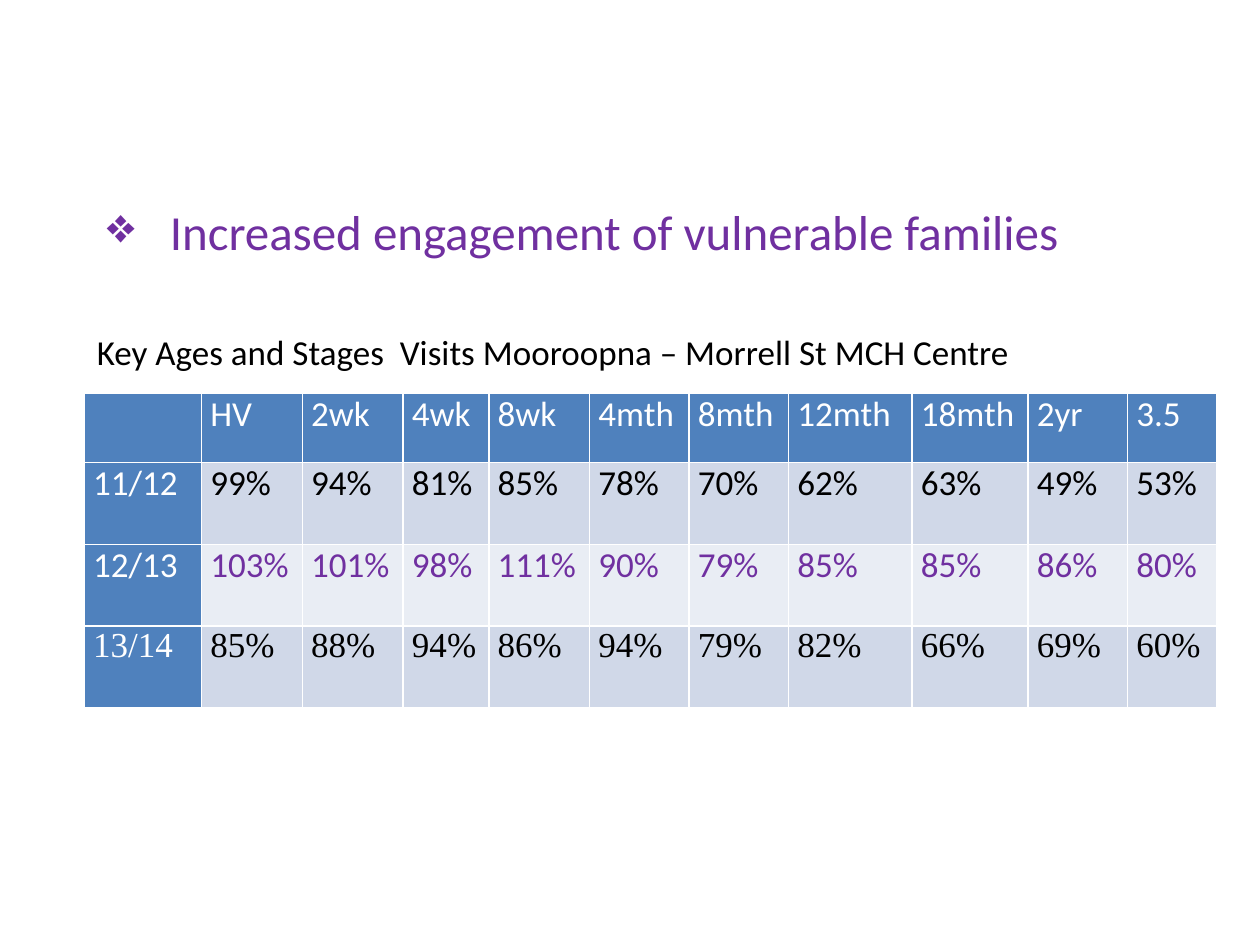
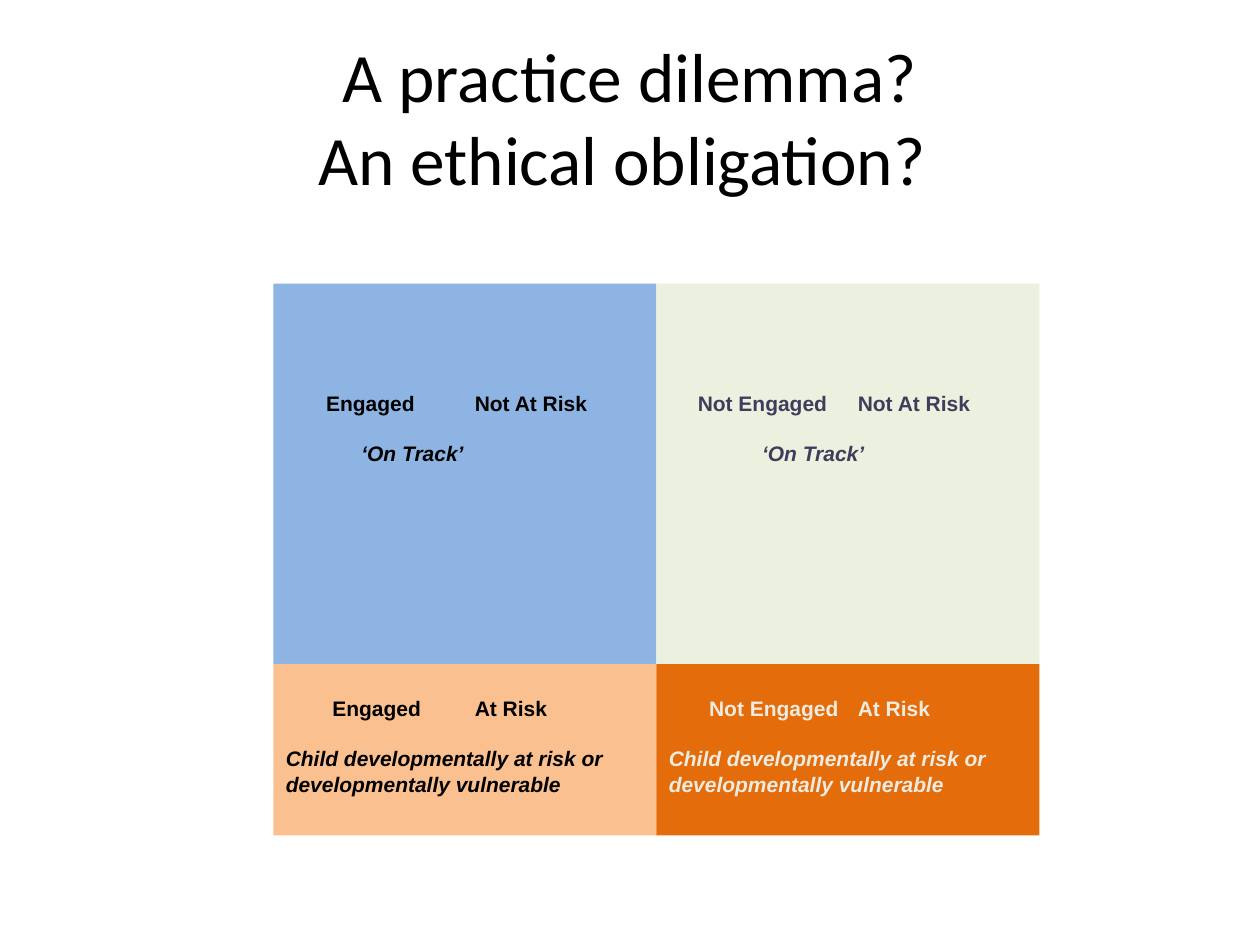
"""Builds two slides: visit rates by key age, and an engagement and risk matrix."""
from typing import NamedTuple

from lxml import etree
from pptx import Presentation
from pptx.dml.color import RGBColor
from pptx.enum.shapes import MSO_SHAPE
from pptx.enum.text import MSO_ANCHOR, PP_ALIGN
from pptx.oxml.ns import qn
from pptx.util import Emu, Pt

RECTANGLE = MSO_SHAPE.RECTANGLE
TOP, MIDDLE = MSO_ANCHOR.TOP, MSO_ANCHOR.MIDDLE
LEFT, CENTER = PP_ALIGN.LEFT, PP_ALIGN.CENTER

EMU_PER_PX = 9144
PAGE_WIDTH, PAGE_HEIGHT = 1000, 750

BLACK, WHITE, PURPLE = "000000", "FFFFFF", "7030A0"
HEADER_BLUE, BAND_DARK, BAND_LIGHT = "4F81BD", "D0D8E8", "E9EDF4"
BODY_FONT, TILE_FONT, SERIF_FONT = "Calibri", "Arial", "Times New Roman"

TABLE_LEFT, TABLE_TOP = 67, 312
COLUMN_WIDTHS = (93, 80, 80, 68, 80, 79, 79, 98, 92, 79, 71)
HEADER_HEIGHT, YEAR_HEIGHT = 55, 65
AGES = ("", "HV", "2wk", "4wk", "8wk", "4mth", "8mth", "12mth", "18mth", "2yr", "3.5")

TILE_LEFT, TILE_WIDTH = 217, 304
TILE_ROWS = ((225, 302), (527, 136))
TILE_PADDING = (85, 25)
TILE_GAP = 14.4
AT_RISK_NOTE = "Child developmentally at risk or developmentally vulnerable"


class Box(NamedTuple):
    """A rectangle in px."""
    left: int
    top: int
    width: int
    height: int


class YearRow(NamedTuple):
    """The visit rates of one year and how they look."""
    year: str
    rates: tuple[int, ...]
    fill: str
    color: str
    font: str


class Tile(NamedTuple):
    """One quadrant of the matrix, with text starts in px from its inset."""
    row: int
    column: int
    fill: str
    color: str
    engagement: str
    risk: str
    note: str
    engagement_start: int
    risk_start: int
    note_start: int


YEARS = (
    YearRow("11/12", (99, 94, 81, 85, 78, 70, 62, 63, 49, 53), BAND_DARK, BLACK, BODY_FONT),
    YearRow("12/13", (103, 101, 98, 111, 90, 79, 85, 85, 86, 80), BAND_LIGHT, PURPLE, BODY_FONT),
    YearRow("13/14", (85, 88, 94, 86, 94, 79, 82, 66, 69, 60), BAND_DARK, BLACK, SERIF_FONT),
)
TILES = (
    Tile(0, 0, "8EB4E3", BLACK, "Engaged", "Not At Risk", "‘On Track’", 32, 130, 60),
    Tile(1, 0, "FAC090", BLACK, "Engaged", "At Risk", AT_RISK_NOTE, 37, 120, 0),
    Tile(1, 1, "E46C0A", "EEECE1", "Not Engaged", "At Risk", AT_RISK_NOTE, 32, 153, 0),
    Tile(0, 1, "EBF1DE", "3E3E5C", "Not Engaged", "Not At Risk", "‘On Track’", 23, 144, 74),
)


def px(length: int) -> Emu:
    """Turn px into EMU."""
    return Emu(length * EMU_PER_PX)


def rgb(color: str) -> RGBColor:
    """Turn a hex string into a colour."""
    return RGBColor.from_string(color)


def place(box: Box) -> tuple[Emu, ...]:
    """Turn a box into EMU lengths."""
    return tuple(px(length) for length in box)


def write(para, text: str, *, size: float, color: str, font: str = BODY_FONT,
          bold: bool = False, italic: bool = False, align=LEFT, before: float = 0,
          margin: int = 0, indent: int = 0, bullet: str = "", tab: int = 0) -> None:
    """Write formatted text into a paragraph."""
    para.text = text
    para.alignment = align
    para.space_before = Pt(before)
    for span in para.runs:
        span.font.size = Pt(size)
        span.font.name = font
        span.font.bold = bold
        span.font.italic = italic
        span.font.color.rgb = rgb(color)
    properties = para._p.get_or_add_pPr()
    properties.set("marL", str(px(margin)))
    properties.set("indent", str(px(indent)))
    if bullet:
        etree.SubElement(properties, qn("a:buChar"), char=bullet)
    if tab:
        stops = etree.SubElement(properties, qn("a:tabLst"))
        etree.SubElement(stops, qn("a:tab"), pos=str(px(tab)), algn="l")


def add_text(page, box: Box, text: str, *, anchor=TOP, **style) -> None:
    """Add a wrapping text box with one paragraph."""
    frame = page.shapes.add_textbox(*place(box)).text_frame
    frame.word_wrap = True
    frame.vertical_anchor = anchor
    write(frame.paragraphs[0], text, **style)


def fill_cell(cell, text: str, *, fill: str, color: str, font: str = BODY_FONT) -> None:
    """Give a cell its borders, fill, insets and text."""
    properties = cell._tc.get_or_add_tcPr()
    for side in ("lnL", "lnR", "lnT", "lnB"):
        line = etree.SubElement(properties, qn(f"a:{side}"), w=str(Pt(1)))
        solid = etree.SubElement(line, qn("a:solidFill"))
        etree.SubElement(solid, qn("a:srgbClr"), val=WHITE)
    cell.fill.solid()
    cell.fill.fore_color.rgb = rgb(fill)
    cell.margin_left = cell.margin_right = px(7)
    cell.margin_top = cell.margin_bottom = 0
    write(cell.text_frame.paragraphs[0], text, size=20, color=color, font=font)


def add_visit_table(page) -> None:
    """Add the table of visit rates by year and age."""
    heights = (HEADER_HEIGHT,) + (YEAR_HEIGHT,) * len(YEARS)
    box = Box(TABLE_LEFT, TABLE_TOP, sum(COLUMN_WIDTHS), sum(heights))
    table = page.shapes.add_table(len(heights), len(AGES), *place(box)).table
    for column, width in zip(table.columns, COLUMN_WIDTHS):
        column.width = px(width)
    for row, height in zip(table.rows, heights):
        row.height = px(height)
    for index, age in enumerate(AGES):
        fill_cell(table.cell(0, index), age, fill=HEADER_BLUE, color=WHITE)
    for row, entry in enumerate(YEARS, start=1):
        fill_cell(table.cell(row, 0), entry.year, fill=HEADER_BLUE, color=WHITE,
                  font=entry.font)
        for index, rate in enumerate(entry.rates, start=1):
            fill_cell(table.cell(row, index), f"{rate}%", fill=entry.fill,
                      color=entry.color, font=entry.font)


def add_tile(page, tile: Tile) -> None:
    """Add one quadrant of the matrix."""
    top, height = TILE_ROWS[tile.row]
    box = Box(TILE_LEFT + tile.column * TILE_WIDTH, top, TILE_WIDTH, height)
    shape = page.shapes.add_shape(RECTANGLE, *place(box))
    shape.shadow.inherit = False
    shape.fill.solid()
    shape.fill.fore_color.rgb = rgb(tile.fill)
    shape.line.fill.background()
    frame = shape.text_frame
    frame.word_wrap = True
    frame.vertical_anchor = TOP
    frame.margin_top = px(TILE_PADDING[tile.row])
    write(frame.paragraphs[0], f"{tile.engagement}\t{tile.risk}", size=12, font=TILE_FONT,
          color=tile.color, bold=True, indent=tile.engagement_start, tab=tile.risk_start)
    write(frame.add_paragraph(), tile.note, size=12, font=TILE_FONT, color=tile.color,
          bold=True, italic=True, before=TILE_GAP, indent=tile.note_start)


def build_visits(page) -> None:
    """Build the slide on engagement of vulnerable families."""
    add_visit_table(page)
    add_text(page, Box(67, 257, 771, 44),
             "Key Ages and Stages  Visits Mooroopna – Morrell St MCH Centre",
             size=20, color=BLACK)
    add_text(page, Box(75, 155, 787, 57), "Increased engagement of vulnerable families",
             size=28, color=PURPLE, margin=50, indent=-50, bullet="❖")


def build_dilemma(page) -> None:
    """Build the slide with the engagement and risk matrix."""
    add_text(page, Box(50, 30, 900, 125), "A practice dilemma?\vAn ethical obligation? ",
             anchor=MIDDLE, size=39.6, color=BLACK, align=CENTER)
    for tile in TILES:
        add_tile(page, tile)


def main() -> None:
    """Build and save the deck."""
    deck = Presentation()
    deck.slide_width, deck.slide_height = px(PAGE_WIDTH), px(PAGE_HEIGHT)
    blank = deck.slide_layouts[6]
    for build in (build_visits, build_dilemma):
        build(deck.slides.add_slide(blank))
    deck.save("out.pptx")


if __name__ == "__main__":
    main()
